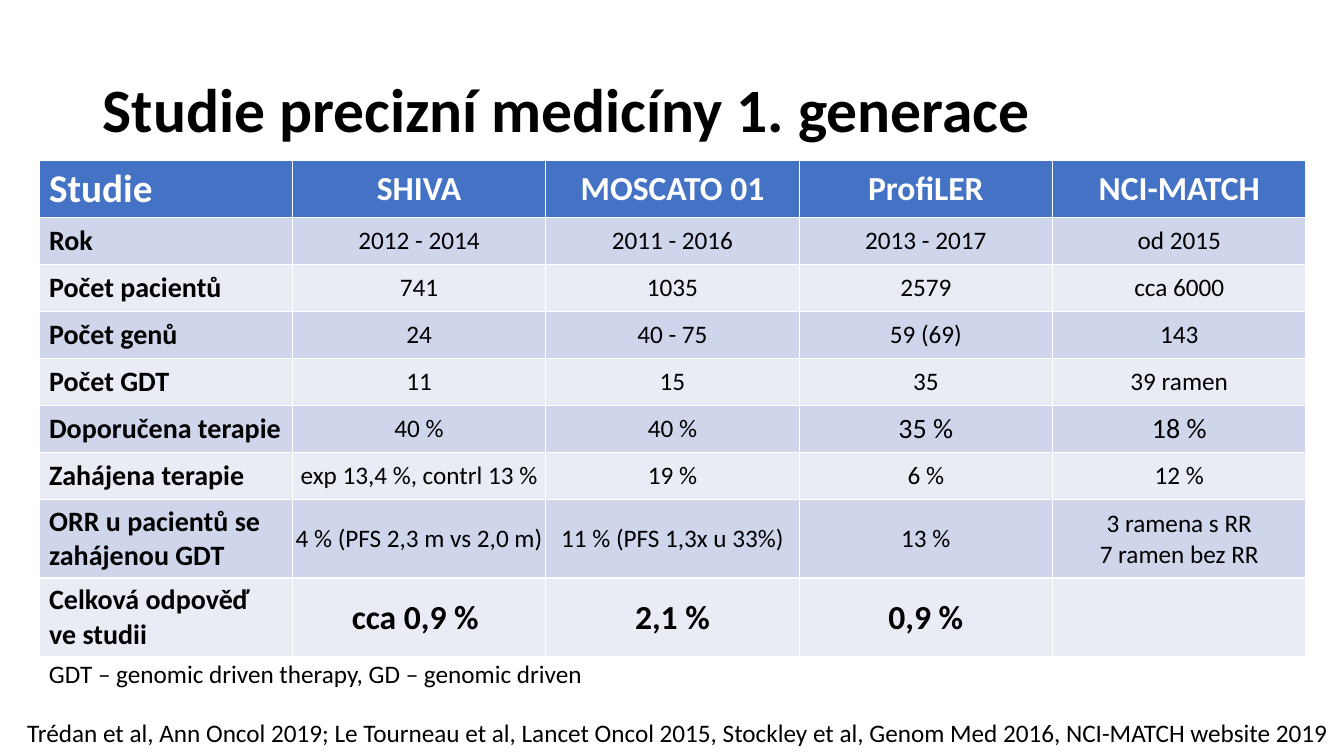
from pptx import Presentation
from pptx.dml.color import RGBColor
from pptx.enum.text import MSO_ANCHOR as Anchor, PP_ALIGN as Align
from pptx.util import Pt

EMU_PER_PX = 914400 / 100.8
BLACK = RGBColor(0x00, 0x00, 0x00)
WHITE = RGBColor(0xFF, 0xFF, 0xFF)
BLUE = RGBColor(0x44, 0x72, 0xC4)
DARK_BAND = RGBColor(0xCF, 0xD5, 0xEA)
LIGHT_BAND = RGBColor(0xE9, 0xEB, 0xF5)


def px(length):
    return round(length * EMU_PER_PX)


def add_text(paragraph, text, size, color=BLACK, bold=False, align=Align.LEFT):
    paragraph.alignment = align
    run = paragraph.add_run()
    run.text = text
    run.font.name = "Calibri"
    run.font.size = Pt(size)
    run.font.bold = bold
    run.font.color.rgb = color


presentation = Presentation()
presentation.slide_width = px(1344)
presentation.slide_height = px(756)
slide = presentation.slides.add_slide(presentation.slide_layouts[6])

# Title, abbreviations and sources: box, text, size, bold, alignment, anchor, wrap
TEXTS = [
    ((93, 40, 1159, 146), "Studie precizní medicíny 1. generace",
     44, True, Align.LEFT, Anchor.MIDDLE, True),
    ((39, 653, 560, 41), "GDT – genomic driven therapy, GD – genomic driven",
     18, False, Align.LEFT, Anchor.TOP, False),
    ((0, 712, 1344, 41),
     " Trédan et al, Ann Oncol 2019; Le Tourneau et al, Lancet Oncol 2015, "
     "Stockley et al, Genom Med 2016, NCI-MATCH website 2019 ",
     18, False, Align.RIGHT, Anchor.TOP, True),
]
for box, text, size, bold, align, anchor, wrap in TEXTS:
    frame = slide.shapes.add_textbox(*map(px, box)).text_frame
    frame.word_wrap = wrap
    frame.vertical_anchor = anchor
    paragraph = frame.paragraphs[0]
    if size == 44:
        paragraph.line_spacing = 0.9
    add_text(paragraph, text, size, BLACK, bold, align)

# Table of studies
ROWS = [
    ["Studie", "SHIVA", "MOSCATO 01", "ProfiLER", "NCI-MATCH"],
    ["Rok", "2012 - 2014", "2011 - 2016", "2013 - 2017", "od 2015"],
    ["Počet pacientů", "741", "1035", "2579", "cca 6000"],
    ["Počet genů", "24", "40 - 75", "59 (69)", "143"],
    ["Počet GDT", "11", "15", "35", "39 ramen"],
    ["Doporučena terapie", "40 %", "40 %", "35 %", "18 %"],
    ["Zahájena terapie", "exp 13,4 %, contrl 13 %", "19 %", "6 %", "12 %"],
    ["ORR u pacientů se zahájenou GDT", "4 % (PFS 2,3 m vs 2,0 m)",
     "11 % (PFS 1,3x u 33%)", "13 %", "3 ramena s RR\n7 ramen bez RR"],
    ["Celková odpověď ve studii", "cca 0,9 % ", "2,1 %", "0,9 %", ""],
]
ROW_HEIGHTS = [57] + [47] * 6 + [79] * 2
TABLE_WIDTH = 1267
HEADER, TOTAL = 0, len(ROWS) - 1
LARGER_CELLS = {(5, 3), (5, 4)}

table = slide.shapes.add_table(
    len(ROWS), len(ROWS[0]), px(39), px(160), px(TABLE_WIDTH), px(sum(ROW_HEIGHTS))
).table
for column in table.columns:
    column.width = px(TABLE_WIDTH / len(ROWS[0]))

for row, values in enumerate(ROWS):
    table.rows[row].height = px(ROW_HEIGHTS[row])
    for column, value in enumerate(values):
        cell = table.cell(row, column)
        cell.vertical_anchor = Anchor.MIDDLE
        cell.fill.solid()
        if row == HEADER:
            cell.fill.fore_color.rgb = BLUE
        else:
            cell.fill.fore_color.rgb = DARK_BAND if row % 2 else LIGHT_BAND
            if column > 0:
                cell.margin_left = cell.margin_top = cell.margin_right = px(1)
                cell.margin_bottom = 0

        if column == 0:
            size = 28 if row == HEADER else 20
        elif row in (HEADER, TOTAL):
            size = 24
        else:
            size = 20 if (row, column) in LARGER_CELLS else 18
        color = WHITE if row == HEADER else BLACK
        bold = column == 0 or row in (HEADER, TOTAL)
        align = Align.CENTER if column else Align.LEFT

        if value:
            frame = cell.text_frame
            for number, line in enumerate(value.split("\n")):
                paragraph = frame.add_paragraph() if number else frame.paragraphs[0]
                add_text(paragraph, line, size, color, bold, align)

presentation.save("out.pptx")
